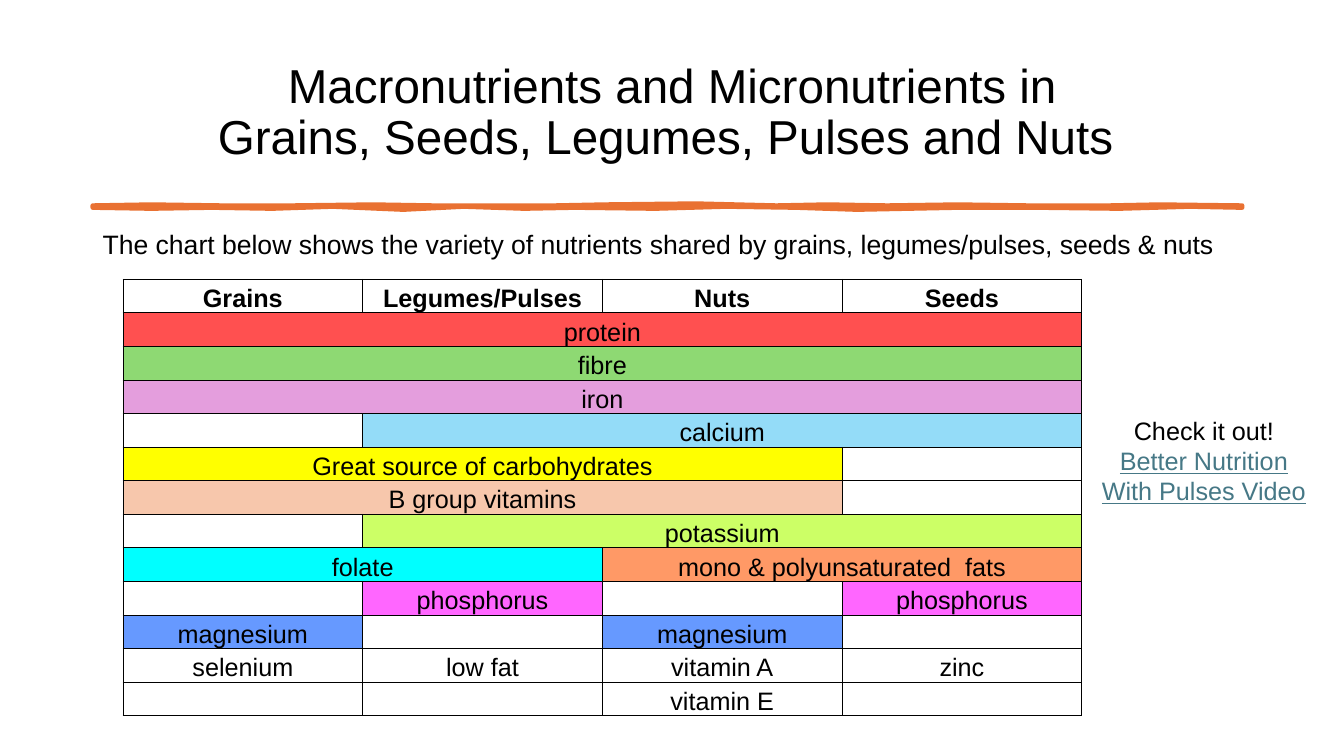
"""Build the slide on nutrients shared by grains, legumes, nuts and seeds."""
from lxml import etree
from pptx import Presentation
from pptx.dml.color import RGBColor
from pptx.enum import text
from pptx.oxml import ns
from pptx.util import Inches, Pt

COLORS = {
    "black": "000000", "white": "FFFFFF", "rule": "E97132", "link": "467886",
    "protein": "FF5050", "fibre": "8ED973", "iron": "E49EDD", "calcium": "94DCF8",
    "Great source of carbohydrates": "FFFF00", "B group vitamins": "F7C7AC",
    "potassium": "CCFF66", "folate": "00FFFF", "mono & polyunsaturated  fats": "FF9966",
    "phosphorus": "FF66FF", "magnesium": "6699FF",
}


def write(p, words, size, color="black", **attrs):
    """Add one formatted run to a paragraph."""
    r = p.add_run()
    r.text = words
    r.font.color.rgb = RGBColor.from_string(COLORS[color])
    for name, value in {"name": "Arial", "size": Pt(size), **attrs}.items():
        setattr(r.font, name, value)


def add_box(s, left, top, width, height):
    """Add a wrapping text box and return its text frame."""
    sp = s.shapes.add_textbox(Inches(left), Inches(top), Inches(width), Inches(height))
    sp.text_frame.word_wrap = True
    return sp.text_frame


prs = Presentation()
prs.slide_width, prs.slide_height = Inches(13.33), Inches(7.5)
s = prs.slides.add_slide(prs.slide_layouts[5])

title = s.shapes.title
for name, value in {"left": 0.92, "top": 0.4, "width": 11.5, "height": 1.45}.items():
    setattr(title, name, Inches(value))
title.text_frame.vertical_anchor = text.MSO_ANCHOR.MIDDLE
p = title.text_frame.paragraphs[0]
p.alignment, p.line_spacing = text.PP_ALIGN.CENTER, 0.9
write(p, "Macronutrients and Micronutrients in", 34)
p.add_line_break()
write(p, "Grains, Seeds, Legumes, Pulses and Nuts ", 34)

upper_edge = [(0.92, 2.04), (1.5, 2.03), (2.2, 2.04), (2.9, 2.04), (3.7, 2.03), (4.3, 2.04),
              (5.0, 2.04), (5.5, 2.04), (6.0, 2.03), (6.9, 2.02), (7.3, 2.03), (7.7, 2.04),
              (8.2, 2.03), (8.8, 2.04), (9.5, 2.03), (10.2, 2.04), (11.0, 2.04),
              (11.5, 2.03), (12.32, 2.04)]
lower_edge = [(12.32, 2.06), (11.8, 2.05), (11.1, 2.07), (10.3, 2.06), (9.5, 2.06),
              (8.5, 2.08), (7.9, 2.06), (7.2, 2.05), (6.5, 2.07), (5.7, 2.06), (5.2, 2.07),
              (4.6, 2.05), (4.0, 2.08), (3.3, 2.05), (2.7, 2.07), (2.1, 2.06),
              (1.5, 2.07), (0.92, 2.06)]
outline = [(Inches(x), Inches(y)) for x, y in upper_edge + lower_edge]
builder = s.shapes.build_freeform(*outline[0])
builder.add_line_segments(outline[1:], close=True)
rule = builder.convert_to_shape()
rule.shadow.inherit = False
rule.fill.solid()
for paint in (rule.fill.fore_color, rule.line.color):
    paint.rgb = RGBColor.from_string(COLORS["rule"])
rule.line.width = Pt(3.25)

p = add_box(s, 0.92, 2.25, 11.5, 0.41).paragraphs[0]
p.line_spacing = 0.9
write(p, "The chart below shows the variety of nutrients shared by grains, "
         "legumes/pulses, seeds & nuts", 19)

rows = [
    [("Grains", 1), ("Legumes/Pulses", 1), ("Nuts", 1), ("Seeds", 1)],
    [("protein", 4)],
    [("fibre", 4)],
    [("iron", 4)],
    [("", 1), ("calcium", 3)],
    [("Great source of carbohydrates", 3), ("", 1)],
    [("B group vitamins", 3), ("", 1)],
    [("", 1), ("potassium", 3)],
    [("folate", 2), ("mono & polyunsaturated  fats", 2)],
    [("", 1), ("phosphorus", 1), ("", 1), ("phosphorus", 1)],
    [("magnesium", 1), ("", 1), ("magnesium", 1), ("", 1)],
    [("selenium", 1), ("low fat", 1), ("vitamin A", 1), ("zinc", 1)],
    [("", 1), ("", 1), ("vitamin E", 1), ("", 1)],
]
table = s.shapes.add_table(len(rows), 4, Inches(1.22), Inches(2.77),
                           Inches(9.51), Inches(4.33)).table
table.first_row = table.horz_banding = False
cell_format = {"margin_left": Inches(0.01), "margin_right": Inches(0.01),
               "margin_top": Inches(0.01), "margin_bottom": 0,
               "vertical_anchor": text.MSO_ANCHOR.BOTTOM}
for i, row in enumerate(rows):
    col = 0
    for words, span in row:
        cell = table.cell(i, col)
        if span > 1:
            cell.merge(table.cell(i, col + span - 1))
        p = cell.text_frame.paragraphs[0]
        p.alignment = text.PP_ALIGN.CENTER
        if words:
            write(p, words, 18, bold=i == 0)
        for part in range(col, col + span):
            cell = table.cell(i, part)
            for name, value in cell_format.items():
                setattr(cell, name, value)
            cell.fill.solid()
            cell.fill.fore_color.rgb = RGBColor.from_string(COLORS.get(words, COLORS["white"]))
            props = cell._tc.get_or_add_tcPr()
            for order, side in enumerate(("a:lnL", "a:lnR", "a:lnT", "a:lnB")):
                border = etree.Element(ns.qn(side), w=str(Pt(0.5)))
                paint = etree.SubElement(border, ns.qn("a:solidFill"))
                etree.SubElement(paint, ns.qn("a:srgbClr"), val=COLORS["black"])
                props.insert(order, border)
        col += span

tf = add_box(s, 10.73, 4.02, 2.42, 1.23)
for name, inset in {"left": 0.12, "right": 0.12, "top": 0.1, "bottom": 0.1}.items():
    setattr(tf, f"margin_{name}", Inches(inset))
invite, video = tf.paragraphs[0], tf.add_paragraph()
invite.alignment = video.alignment = text.PP_ALIGN.CENTER
write(invite, "Check it out!", 18)
write(video, "Better Nutrition With Pulses Video", 18, "link", underline=True)

prs.save("out.pptx")
